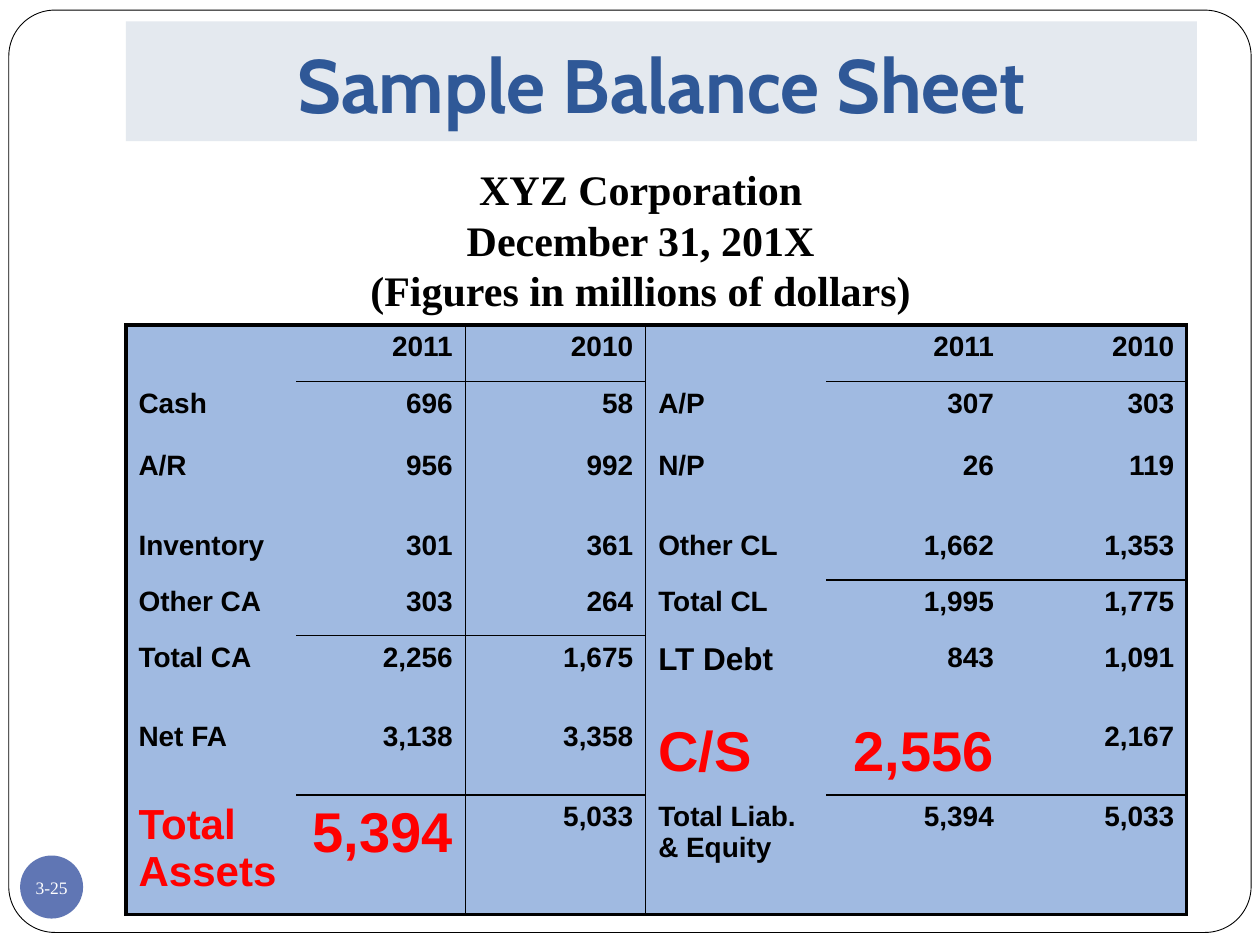
from dataclasses import dataclass

from lxml.etree import SubElement
from pptx import Presentation
from pptx.dml.color import RGBColor
from pptx.enum.shapes import MSO_SHAPE
from pptx.enum.text import MSO_ANCHOR, PP_ALIGN
from pptx.oxml.ns import qn
from pptx.util import Inches, Pt


@dataclass(frozen=True)
class Theme:
    white: str = "FFFFFF"
    black: str = "000000"
    badge: str = "6076B4"
    title_band: str = "E4E9EF"
    title_text: str = "2F5897"
    cell: str = "A0BAE1"
    highlight: str = "FF0000"
    title_font: str = "Cabin"
    heading_font: str = "Times New Roman"
    table_font: str = "Arial"
    title_size: float = 43.2
    heading_size: float = 24
    badge_size: float = 10
    table_size: float = 16
    outer_line: float = 2.25
    inner_line: float = 1
    frame_line: float = 0.5


THEME = Theme()
SLIDE_WIDTH, SLIDE_HEIGHT = Inches(10), Inches(7.5)

BALANCE_SHEET = [
    ["", "2011", "2010", "", "2011", "2010"],
    ["Cash", "696", "58", "A/P", "307", "303"],
    ["A/R", "956", "992", "N/P", "26", "119"],
    ["Inventory", "301", "361", "Other CL", "1,662", "1,353"],
    ["Other CA", "303", "264", "Total CL", "1,995", "1,775"],
    ["Total CA", "2,256", "1,675", "LT Debt", "843", "1,091"],
    ["Net FA", "3,138", "3,358", "C/S", "2,556", "2,167"],
    ["Total Assets", "5,394", "5,033", "Total Liab. & Equity", "5,394", "5,033"],
]
COLUMN_WEIGHTS = [1.35, 1.34, 1.43, 1.43, 1.43, 1.43]
ROW_WEIGHTS = [0.45, 0.5, 0.63, 0.45, 0.44, 0.63, 0.64, 0.95]
LABEL_COLUMNS = {0, 3}

# Cells that stand out: (row, column) -> size, colour
EMPHASIS = {
    (5, 3): (18, THEME.black),
    (6, 3): (32, THEME.highlight),
    (6, 4): (32, THEME.highlight),
    (7, 0): (24, THEME.highlight),
    (7, 1): (32, THEME.highlight),
}

# Ruled edges: columns with a line on their right, rows with a line below
ASSETS, LIABILITIES = {1, 2}, {4, 5}
RULED_COLUMNS = {1, 2}
RULES_BELOW = {0: ASSETS | LIABILITIES, 3: LIABILITIES, 4: ASSETS,
               6: ASSETS | LIABILITIES}


def place(left, top, width, height):
    """Turn percentages of the slide into lengths."""
    return (int(SLIDE_WIDTH * left / 100), int(SLIDE_HEIGHT * top / 100),
            int(SLIDE_WIDTH * width / 100), int(SLIDE_HEIGHT * height / 100))


def style(paragraph, font_name, size, color, bold=True, align=PP_ALIGN.CENTER):
    paragraph.alignment = align
    font = paragraph.font
    font.name, font.size, font.bold = font_name, Pt(size), bold
    font.color.rgb = RGBColor.from_string(color)


def add_panel(slide, preset, box, fill, line=None):
    panel = slide.shapes.add_shape(preset, *box)
    panel.shadow.inherit = False
    panel.fill.solid()
    panel.fill.fore_color.rgb = RGBColor.from_string(fill)
    if line:
        panel.line.color.rgb = RGBColor.from_string(line)
        panel.line.width = Pt(THEME.frame_line)
    else:
        panel.line.fill.background()
    return panel


def add_frame(slide):
    frame = add_panel(slide, MSO_SHAPE.ROUNDED_RECTANGLE,
                      place(0.7, 1.07, 98.6, 97.6), THEME.white, THEME.black)
    frame.adjustments[0] = 0.05


def add_page_badge(slide, number):
    badge = add_panel(slide, MSO_SHAPE.OVAL, place(1.6, 90.53, 5, 6.67), THEME.badge)
    label = badge.text_frame
    label.margin_left = label.margin_right = label.margin_top = label.margin_bottom = 0
    label.word_wrap = False
    label.vertical_anchor = MSO_ANCHOR.MIDDLE
    label.text = number
    style(label.paragraphs[0], THEME.heading_font, THEME.badge_size, THEME.white, bold=False)


def add_title(slide, title):
    band = add_panel(slide, MSO_SHAPE.RECTANGLE, place(10, 2.27, 85, 12.67), THEME.title_band)
    frame = band.text_frame
    frame.margin_bottom = Inches(0.1)
    frame.vertical_anchor = MSO_ANCHOR.BOTTOM
    frame.text = title
    style(frame.paragraphs[0], THEME.title_font, THEME.title_size, THEME.title_text)


def add_heading(slide, lines):
    heading = slide.shapes.add_textbox(*place(19.2, 16.67, 63.3, 17.47)).text_frame
    heading.word_wrap = True
    heading.text = "\n".join(lines)
    for paragraph in heading.paragraphs:
        style(paragraph, THEME.heading_font, THEME.heading_size, THEME.black)


def edge_widths(row, column):
    """Line widths of a cell by side; 0 means no line."""
    last_row, last_column = len(ROW_WEIGHTS) - 1, len(COLUMN_WEIGHTS) - 1

    def width(is_outer, is_ruled):
        return THEME.outer_line if is_outer else THEME.inner_line if is_ruled else 0

    return {
        "a:lnL": width(column == 0, column - 1 in RULED_COLUMNS),
        "a:lnR": width(column == last_column, column in RULED_COLUMNS),
        "a:lnT": width(row == 0, column in RULES_BELOW.get(row - 1, ())),
        "a:lnB": width(row == last_row, column in RULES_BELOW.get(row, ())),
    }


def set_borders(cell, widths):
    properties = cell._tc.get_or_add_tcPr()
    for position, (side, width) in enumerate(widths.items()):
        border = SubElement(properties, qn(side), w=str(Pt(width)))
        if width:
            fill = SubElement(border, qn("a:solidFill"))
            SubElement(fill, qn("a:srgbClr"), val=THEME.black)
        else:
            SubElement(border, qn("a:noFill"))
        properties.insert(position, border)  # borders come before the fill


def add_balance_sheet(slide):
    left, top, width, height = place(10, 34.4, 84.2, 62.4)
    table = slide.shapes.add_table(len(ROW_WEIGHTS), len(COLUMN_WEIGHTS),
                                   left, top, width, height).table
    table.first_row = table.horz_banding = False
    for column, weight in zip(table.columns, COLUMN_WEIGHTS):
        column.width = int(width * weight / sum(COLUMN_WEIGHTS))
    for row, weight in zip(table.rows, ROW_WEIGHTS):
        row.height = int(height * weight / sum(ROW_WEIGHTS))

    for r, entries in enumerate(BALANCE_SHEET):
        for c, entry in enumerate(entries):
            cell = table.cell(r, c)
            cell.text = entry
            cell.fill.solid()
            cell.fill.fore_color.rgb = RGBColor.from_string(THEME.cell)
            size, color = EMPHASIS.get((r, c), (THEME.table_size, THEME.black))
            align = PP_ALIGN.LEFT if c in LABEL_COLUMNS else PP_ALIGN.RIGHT
            style(cell.text_frame.paragraphs[0], THEME.table_font, size, color, align=align)
            set_borders(cell, edge_widths(r, c))


def main():
    presentation = Presentation()
    presentation.slide_width, presentation.slide_height = SLIDE_WIDTH, SLIDE_HEIGHT
    slide = presentation.slides.add_slide(presentation.slide_layouts[6])

    # Page furniture
    add_frame(slide)
    add_page_badge(slide, "3-25")

    # Content
    add_title(slide, "Sample Balance Sheet")
    add_balance_sheet(slide)
    add_heading(slide, ["XYZ Corporation", "December 31, 201X",
                        "(Figures in millions of dollars)"])
    presentation.save("out.pptx")


if __name__ == "__main__":
    main()
